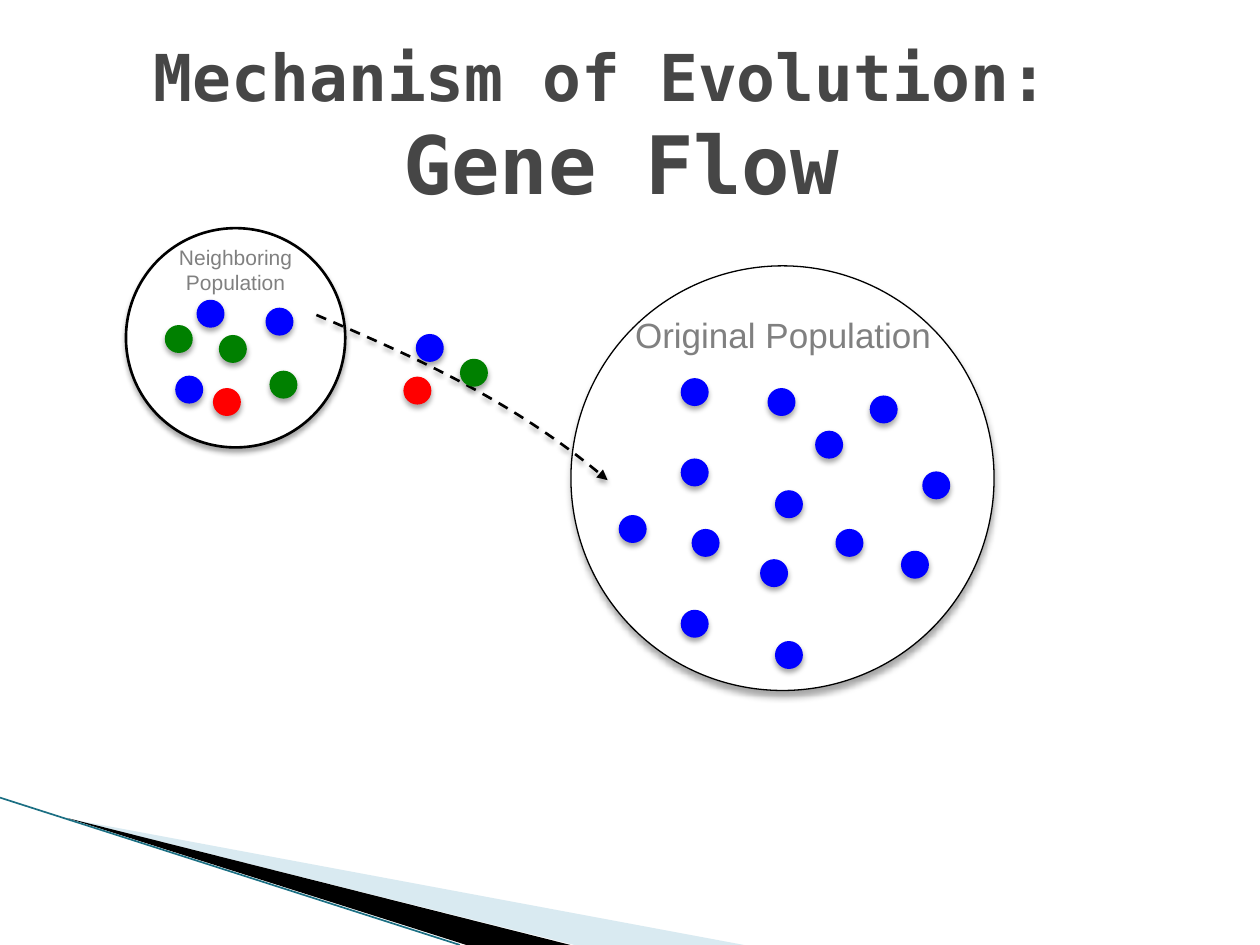
import pptx
import pptx.dml.color
import pptx.enum.dml
import pptx.enum.shapes
import pptx.enum.text
import pptx.oxml
import pptx.oxml.ns
import pptx.util

Cm = pptx.util.Cm
Pt = pptx.util.Pt
qn = pptx.oxml.ns.qn

COLORS = {
    "white": "FFFFFF", "black": "000000", "title": "464646", "label": "808080",
    "blue": "0000FF", "green": "008000", "red": "FF0000",
    "pale": "A0CBDC", "teal": "1B6F83",
}
DOT_SIZE = 0.51

ORIGINAL_DOTS = {
    "blue": [(3.99, 2.49), (4.95, 3.35), (4.14, 4.55), (2.46, 5.33), (2.24, 2.29),
             (2.24, 3.91), (3.84, 5.94), (6.05, 2.64), (5.36, 5.33), (6.68, 5.77),
             (7.11, 4.17), (4.14, 7.59), (2.24, 6.96), (0.99, 5.05)],
}
NEIGHBOR_DOTS = {
    "blue": [(1.02, 3), (2.84, 1.63), (1.45, 1.47)],
    "green": [(1.9, 2.18), (0.81, 1.98), (2.92, 2.9)],
    "red": [(1.78, 3.25)],
}
MIGRANT_DOTS = {"red": [(1.78, 1.27)], "blue": [(2.03, 0.41)], "green": [(2.92, 0.91)]}


def rgb(name):
    return pptx.dml.color.RGBColor.from_string(COLORS[name])


def add_child(parent, tag, **attributes):
    child = parent.makeelement(qn(tag), attributes)
    parent.append(child)
    return child


def add_shadow(shape, blur=3, distance=2):
    """Give the shape a soft black shadow straight below it."""
    shape.shadow.inherit = False
    effects = shape._element.spPr.find(qn("a:effectLst"))
    shadow = add_child(effects, "a:outerShdw", blurRad=str(Pt(blur)), dist=str(Pt(distance)),
                       dir="5400000", rotWithShape="0")
    color = add_child(shadow, "a:srgbClr", val=COLORS["black"])
    add_child(color, "a:alpha", val="35000")


def add_circle(page, left, top, width, height, fill, line, weight, **shadow):
    circle = page.shapes.add_shape(pptx.enum.shapes.MSO_SHAPE.OVAL,
                                   Cm(left), Cm(top), Cm(width), Cm(height))
    circle.fill.solid()
    circle.fill.fore_color.rgb = rgb(fill)
    circle.line.color.rgb = rgb(line)
    circle.line.width = Pt(weight)
    add_shadow(circle, **shadow)


def add_dots(page, left, top, dots):
    for color, places in dots.items():
        for x, y in places:
            add_circle(page, left + x, top + y, DOT_SIZE, DOT_SIZE, color, color, 1.5)


def add_text(page, left, top, width, height, paragraphs, anchor, **font):
    """Add centred paragraphs, each a list of (text, size) spans."""
    box = page.shapes.add_textbox(Cm(left), Cm(top), Cm(width), Cm(height))
    frame = box.text_frame
    frame.word_wrap = True
    frame.vertical_anchor = anchor
    for number, spans in enumerate(paragraphs):
        para = frame.paragraphs[0] if number == 0 else frame.add_paragraph()
        para.alignment = pptx.enum.text.PP_ALIGN.CENTER
        for index, (text, size) in enumerate(spans):
            if index:
                para.add_line_break()
            span = para.add_run()
            span.text = text
            for key, value in {"size": Pt(size), **font}.items():
                setattr(span.font, key, value)
            span.font.color.rgb = rgb("title" if font.get("bold") else "label")
    return frame


def add_title(page, left, top, width, height):
    add_text(page, left, top, width, height,
             [[("Mechanism of Evolution: ", 36.9), ("Gene Flow", 46)]],
             pptx.enum.text.MSO_ANCHOR.MIDDLE, name="DejaVu Sans Mono", bold=True)


def add_population(page, left, top, width, height, weight, dots, label, label_box, size, **shadow):
    """Draw a population circle with its label and its individuals."""
    add_circle(page, left, top, width, height, "white", "black", weight, **shadow)
    x, y, label_width, label_height = label_box
    frame = add_text(page, left + x, top + y, label_width, label_height,
                     [[(line, size)] for line in label],
                     pptx.enum.text.MSO_ANCHOR.TOP, name="Arial")
    for side in ("left", "top", "right", "bottom"):
        setattr(frame, f"margin_{side}", Cm(0.25))
    add_dots(page, left, top, dots)


def add_outline(page, left, top, points, close):
    places = [(Cm(left + x), Cm(top + y)) for x, y in points]
    builder = page.shapes.build_freeform(*places[0])
    builder.add_line_segments(places[1:], close=close)
    shape = builder.convert_to_shape()
    shape.shadow.inherit = False
    return shape


def add_migration(page, left, top):
    """Draw the dashed curved arrow and the migrants beside it."""
    curve = add_outline(page, left, top,
                        [(0, 0), (2.01, 0.86), (4.01, 1.75), (5.87, 3.33)], close=False)
    outline = next(curve._element.iter(qn("a:path")))
    bezier = add_child(outline, "a:cubicBezTo")
    for segment in outline.findall(qn("a:lnTo")):
        bezier.append(segment[0])
        outline.remove(segment)
    curve.fill.background()
    curve.line.color.rgb = rgb("black")
    curve.line.width = Pt(1.5)
    curve.line.dash_style = pptx.enum.dml.MSO_LINE.DASH
    add_child(curve._element.spPr.find(qn("a:ln")), "a:tailEnd", type="triangle")
    add_shadow(curve)
    add_dots(page, left, top, MIGRANT_DOTS)


def add_swoosh(page, left, top, height):
    """Draw the two corner wedges and the line along their lower edge."""
    wedges = [
        ("pale", 40, [(1.4, 0.43), (15, height), (11.58, height)]),
        ("black", 100, [(1.35, 0.41), (11.5, height), (9.4, height)]),
    ]
    for color, opacity, points in wedges:
        wedge = add_outline(page, left, top, points, close=True)
        wedge.fill.solid()
        wedge.fill.fore_color.rgb = rgb(color)
        wedge.line.fill.background()
        if opacity < 100:
            fill_color = wedge._element.spPr.find(qn("a:solidFill"))[0]
            add_child(fill_color, "a:alpha", val=str(opacity * 1000))
    edge = page.shapes.add_connector(pptx.enum.shapes.MSO_CONNECTOR.STRAIGHT,
                                     Cm(left), Cm(top), Cm(left + 9.27), Cm(top + height))
    edge.line.color.rgb = rgb("teal")
    edge.line.width = Pt(0.95)
    add_child(edge._element.spPr, "a:effectLst")


def main():
    deck = pptx.Presentation()
    deck.slide_width, deck.slide_height = Cm(25.4), Cm(19.05)
    page = deck.slides.add_slide(deck.slide_layouts[6])
    add_swoosh(page, 0, 16.08, 2.97)
    add_title(page, 2.21, 0.91, 20.62, 3.18)
    add_population(page, 11.51, 5.36, 8.53, 8.56, 0.75, ORIGINAL_DOTS,
                   ["Original Population"], (0.89, 0.71, 6.78, 1.27), 20, blur=4, distance=3)
    add_population(page, 2.54, 4.6, 4.42, 4.42, 1.5, NEIGHBOR_DOTS,
                   ["Neighboring", "Population"], (-0.33, 0.08, 5.08, 1.9), 12)
    add_migration(page, 6.38, 6.35)
    deck.save("out.pptx")


if __name__ == "__main__":
    main()
